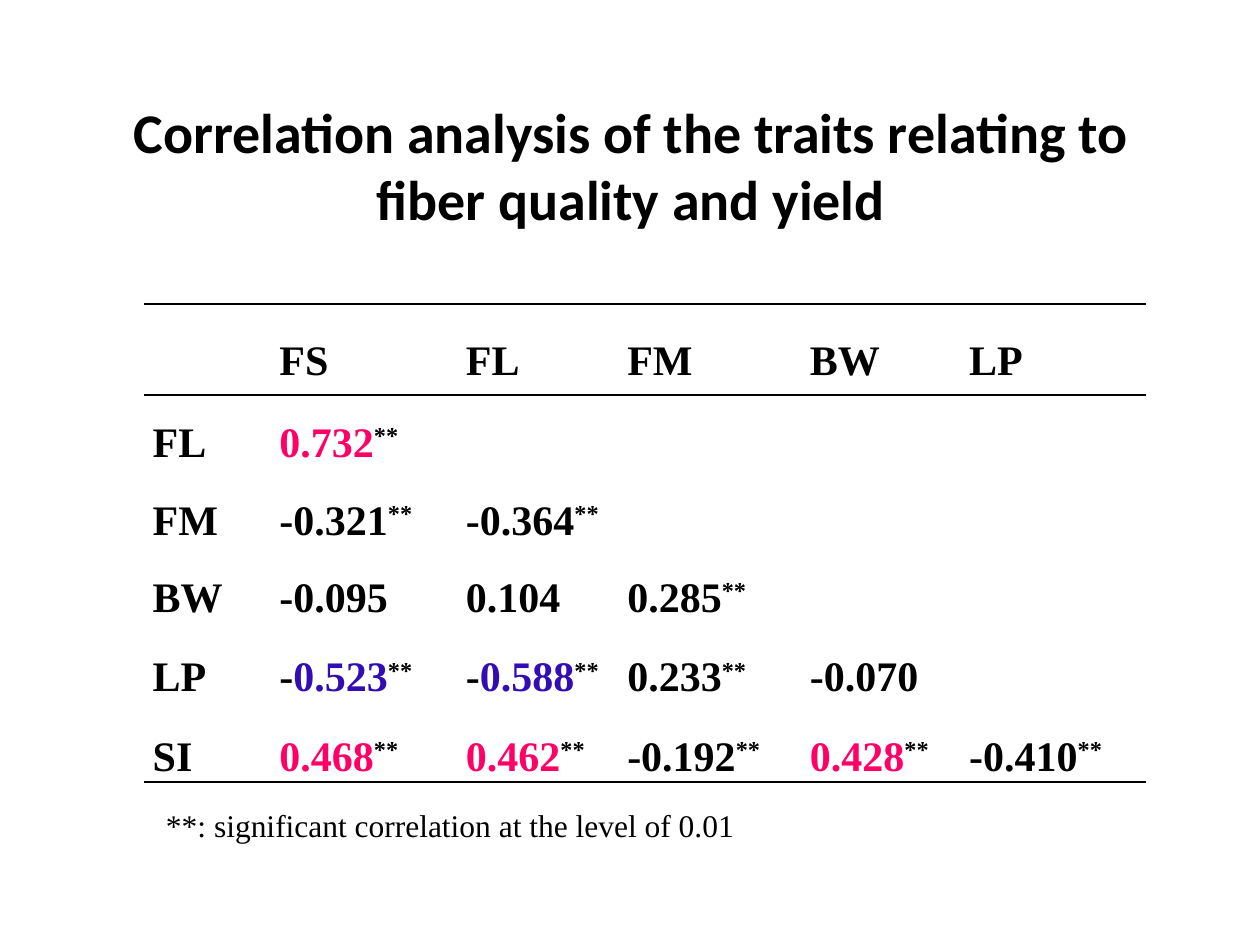
"""Build a slide with a correlation table of fiber quality and yield traits."""
from lxml import etree
from pptx import Presentation
from pptx import util as u
from pptx.dml import color
from pptx.enum import text
from pptx.oxml import ns

BLACK, PINK, BLUE = "000000", "FF0066", "310DB3"
SERIF = "Times New Roman"


def style(span, hex_color, **values):
    for name, value in values.items():
        setattr(span.font, name, value)
    span.font.color.rgb = color.RGBColor.from_string(hex_color)


def set_borders(cell, drawn):
    properties = cell._tc.get_or_add_tcPr()
    for position, side in enumerate("LRTB"):
        line = etree.Element(ns.qn(f"a:ln{side}"), w=str(u.Pt(1)))
        if side in drawn:
            fill = etree.SubElement(line, ns.qn("a:solidFill"))
            etree.SubElement(fill, ns.qn("a:srgbClr"), val=BLACK)
        else:
            etree.SubElement(line, ns.qn("a:noFill"))
        properties.insert(position, line)


deck = Presentation()
deck.slide_width, deck.slide_height = u.Pt(720), u.Pt(540)
page = deck.slides.add_slide(deck.slide_layouts[5])

title = page.shapes.title
title.left, title.top, title.width, title.height = map(u.Pt, (36.7, 49, 648, 90))
title.text_frame.vertical_anchor = text.MSO_ANCHOR.MIDDLE
para = title.text_frame.paragraphs[0]
para.alignment = text.PP_ALIGN.CENTER
span = para.add_run()
span.text = "Correlation analysis of the traits relating to fiber quality and yield"
style(span, BLACK, name="Calibri", size=u.Pt(32), bold=True)

correlations = [
    ["", "FS", "FL", "FM", "BW", "LP"],
    ["FL", "0.732|**"],
    ["FM", "-0.321|**", "-0.364|**"],
    ["BW", "-0.095", "0.104", "0.285|**"],
    ["LP", "-|0.523|**", "-|0.588|**", "0.233|**", "-0.070"],
    ["SI", "0.468|**", "0.462|**", "-0.192|**", "0.428|**", "-0.410|**"],
]
highlights = {"0.732": PINK, "0.468": PINK, "0.462": PINK, "0.428": PINK,
              "0.523": BLUE, "0.588": BLUE}
column_widths = [72.4, 106.6, 92.2, 104.4, 91, 106]
row_heights = [52.2, 41.8, 46.8, 41.8, 49, 41.8]
row_borders = {0: "TB", 1: "T", 5: "B"}
cell_format = {"margin_left": u.Pt(5), "margin_right": u.Pt(5), "margin_top": 0,
               "margin_bottom": 0, "vertical_anchor": text.MSO_ANCHOR.MIDDLE}

table = page.shapes.add_table(
    len(row_heights), len(column_widths), u.Pt(82.3), u.Pt(173.6),
    u.Pt(sum(column_widths)), u.Pt(sum(row_heights))).table
table.first_row = table.horz_banding = False
for column, width in zip(table.columns, column_widths):
    column.width = u.Pt(width)
for row, height in zip(table.rows, row_heights):
    row.height = u.Pt(height)

for row_index, row in enumerate(table.rows):
    values = correlations[row_index]
    for column_index, cell in enumerate(row.cells):
        for name, value in cell_format.items():
            setattr(cell, name, value)
        cell.fill.background()
        set_borders(cell, row_borders.get(row_index, ""))
        if column_index >= len(values) or not values[column_index]:
            continue
        para = cell.text_frame.paragraphs[0]
        para.alignment, para.line_spacing = text.PP_ALIGN.JUSTIFY, 1.5
        for piece in values[column_index].split("|"):
            span = para.add_run()
            span.text = piece
            style(span, highlights.get(piece, BLACK), name=SERIF, size=u.Pt(24), bold=True)
            if piece == "**":
                span._r.get_or_add_rPr().set("baseline", "30000")

note = page.shapes.add_textbox(*map(u.Pt, (87.8, 457.2, 476, 28.8)))
frame = note.text_frame
frame.word_wrap = True
frame.auto_size = text.MSO_AUTO_SIZE.SHAPE_TO_FIT_TEXT
frame.vertical_anchor = text.MSO_ANCHOR.MIDDLE
span = frame.paragraphs[0].add_run()
span.text = "**: significant correlation at the level of 0.01"
style(span, BLACK, name=SERIF, size=u.Pt(18))

deck.save("out.pptx")
